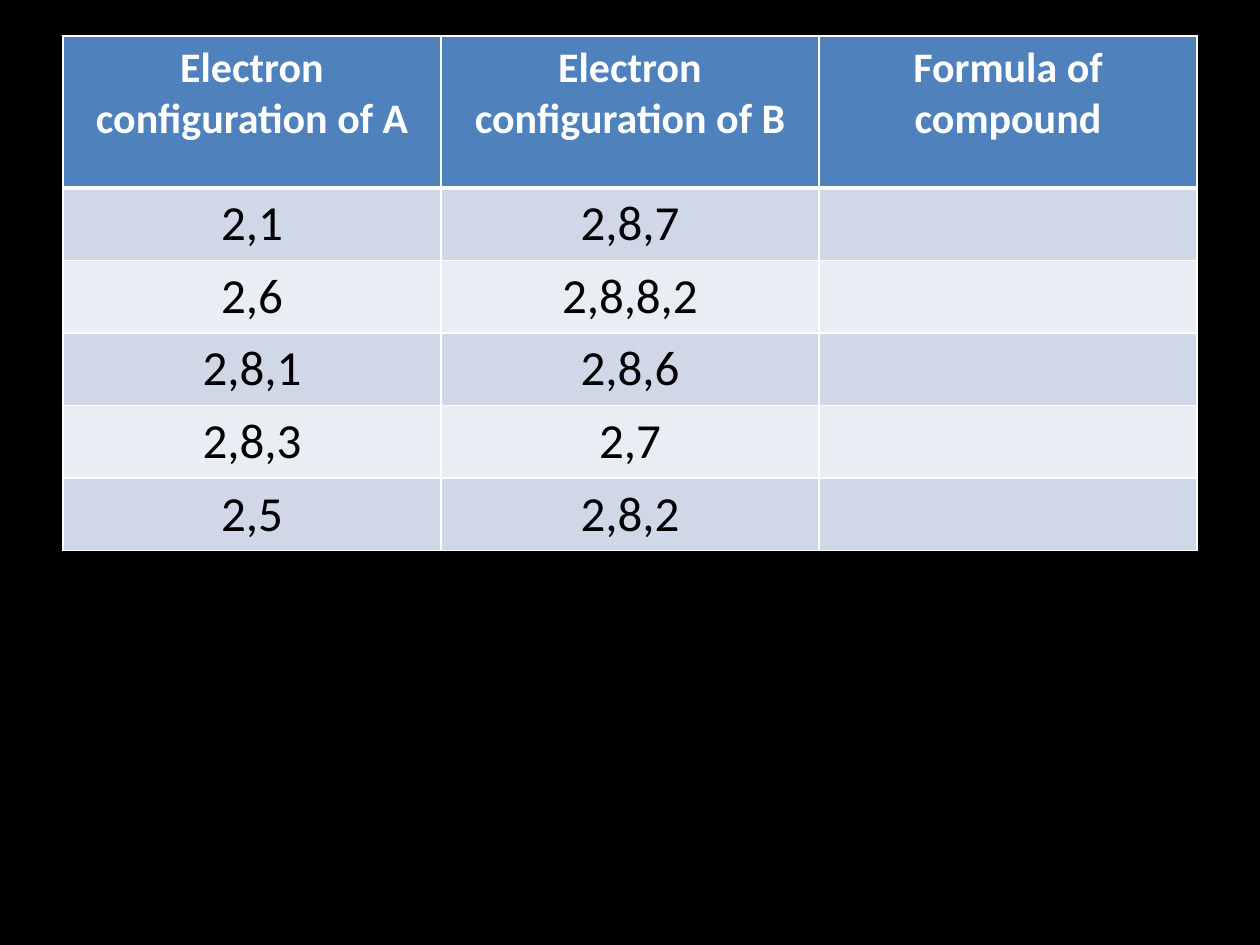
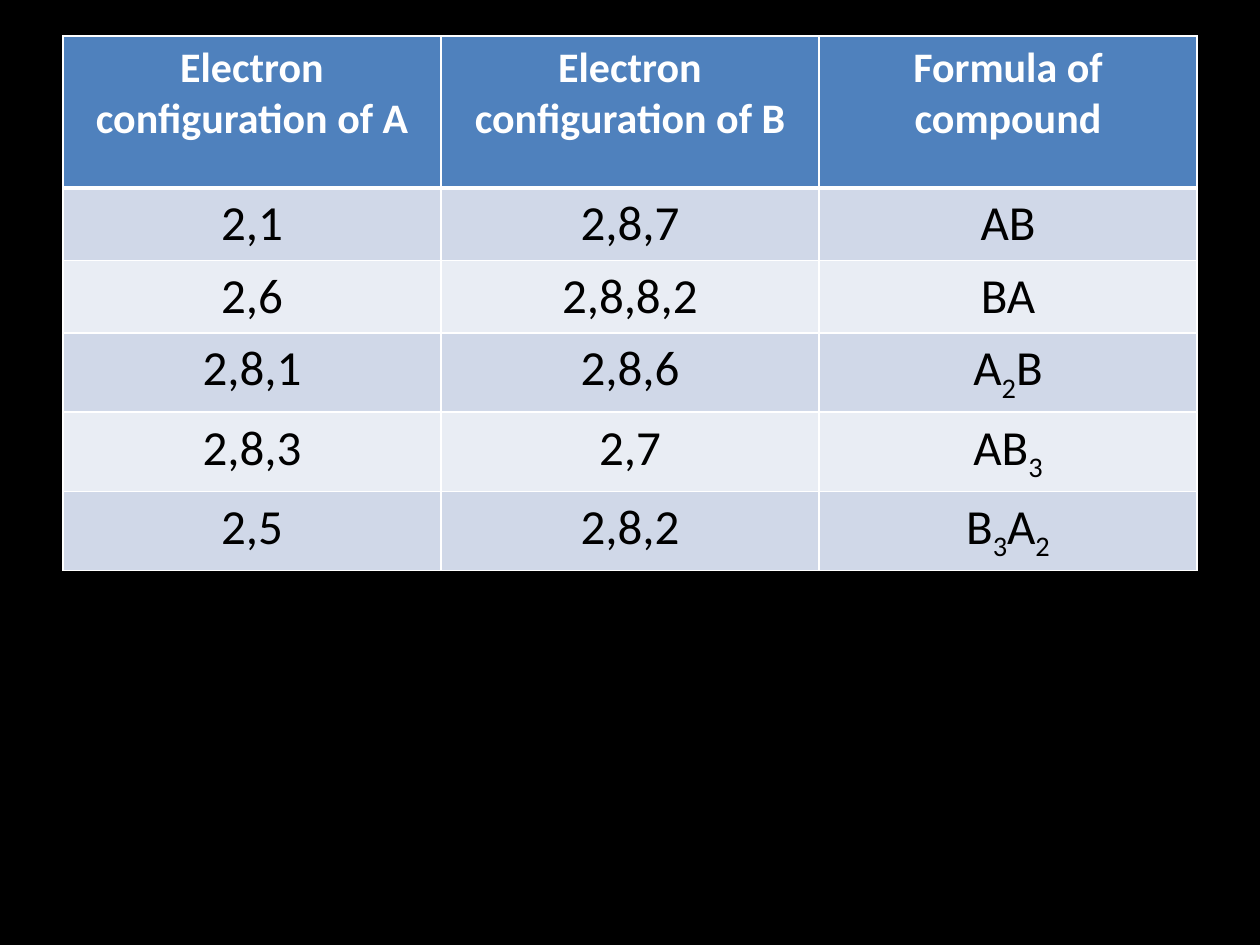
"""Build two slides: an electron configuration exercise and its answers."""
from dataclasses import dataclass
from itertools import groupby

from lxml import etree
from pptx import Presentation
from pptx.dml.color import RGBColor
from pptx.enum.text import PP_ALIGN
from pptx.oxml.ns import qn
from pptx.util import Emu, Pt

CENTER = PP_ALIGN.CENTER
PX = 914400 / 126
BLANK_LAYOUT = 6


@dataclass(frozen=True)
class Theme:
    font: str = "Calibri"
    background: str = "000000"
    header_fill: str = "4F81BD"
    header_text: str = "FFFFFF"
    body_text: str = "000000"
    bands: tuple = ("D0D8E8", "E9EDF4")
    border: str = "FFFFFF"
    header_size: int = 24
    body_size: int = 28
    thin: int = 1
    thick: int = 3


THEME = Theme()
TABLE_LEFT, TABLE_TOP = 63, 36
COLUMN_WIDTH = 378
HEADER_HEIGHT, ROW_HEIGHT, SUBSCRIPT_ROW_HEIGHT = 152, 72, 79

HEADERS = ("Electron configuration of A", "Electron configuration of B", "Formula of compound")
CONFIGURATIONS = (("2,1", "2,8,7"), ("2,6", "2,8,8,2"), ("2,8,1", "2,8,6"),
                  ("2,8,3", "2,7"), ("2,5", "2,8,2"))
ANSWERS = ("AB", "BA", "A2B", "AB3", "B3A2")
UNANSWERED = ("",) * len(ANSWERS)


def px(length):
    return Emu(round(length * PX))


def set_borders(cell, widths):
    properties = cell._tc.get_or_add_tcPr()
    for index, (side, width) in enumerate(widths.items()):
        line = etree.Element(qn(f"a:ln{side}"), w=str(Pt(width)))
        fill = etree.SubElement(line, qn("a:solidFill"))
        etree.SubElement(fill, qn("a:srgbClr"), val=THEME.border)
        properties.insert(index, line)


presentation = Presentation()
presentation.slide_width, presentation.slide_height = px(1260), px(945)

for formulas in (UNANSWERED, ANSWERS):
    slide = presentation.slides.add_slide(presentation.slide_layouts[BLANK_LAYOUT])
    slide.background.fill.solid()
    slide.background.fill.fore_color.rgb = RGBColor.from_string(THEME.background)

    rows = [HEADERS] + [(*pair, formula) for pair, formula in zip(CONFIGURATIONS, formulas)]
    heights = [HEADER_HEIGHT] + [
        ROW_HEIGHT if formula.isalpha() or not formula else SUBSCRIPT_ROW_HEIGHT
        for formula in formulas]
    frame = slide.shapes.add_table(
        len(rows), len(HEADERS), px(TABLE_LEFT), px(TABLE_TOP),
        px(COLUMN_WIDTH * len(HEADERS)), px(sum(heights)))
    table = frame.table
    table.horz_banding = False
    for column in table.columns:
        column.width = px(COLUMN_WIDTH)

    for row_index, (texts, height) in enumerate(zip(rows, heights)):
        is_header = row_index == 0
        table.rows[row_index].height = px(height)
        fill_color = THEME.header_fill if is_header else THEME.bands[(row_index - 1) % 2]
        text_color = THEME.header_text if is_header else THEME.body_text
        widths = {"L": THEME.thin, "R": THEME.thin,
                  "T": THEME.thick if row_index == 1 else THEME.thin,
                  "B": THEME.thick if is_header else THEME.thin}

        for column_index, text in enumerate(texts):
            cell = table.cell(row_index, column_index)
            cell.fill.solid()
            cell.fill.fore_color.rgb = RGBColor.from_string(fill_color)
            set_borders(cell, widths)
            paragraph = cell.text_frame.paragraphs[0]
            paragraph.alignment = CENTER
            is_formula = column_index == 2 and not is_header
            for is_subscript, letters in groupby(text, lambda letter: is_formula and letter.isdigit()):
                run = paragraph.add_run()
                run.text = "".join(letters)
                run.font.name = THEME.font
                run.font.size = Pt(THEME.header_size if is_header else THEME.body_size)
                run.font.bold = is_header
                run.font.color.rgb = RGBColor.from_string(text_color)
                if is_subscript:
                    run._r.get_or_add_rPr().set("baseline", "-25000")

presentation.save("out.pptx")
